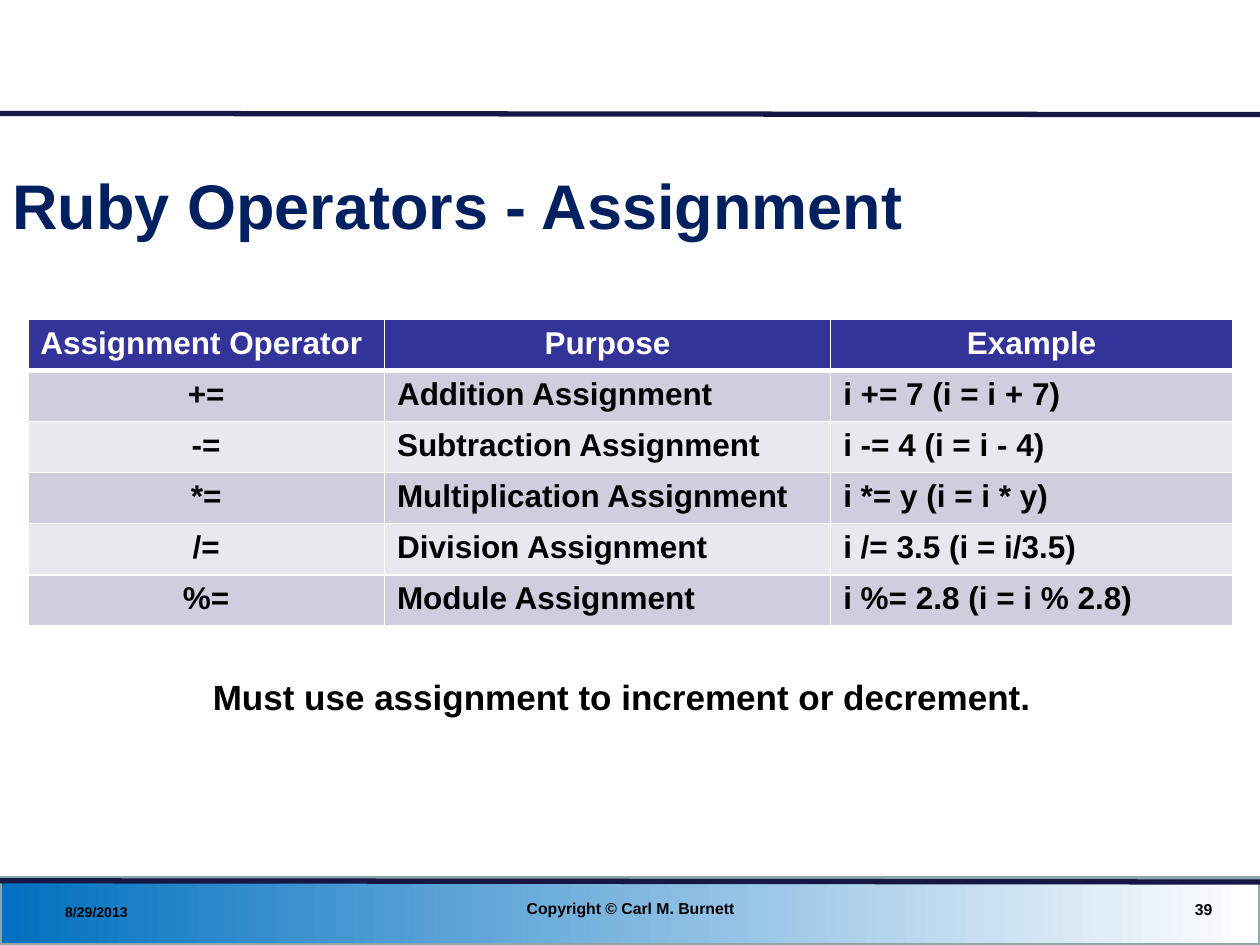
from lxml import etree
from pptx import Presentation
from pptx.dml.color import RGBColor
from pptx.enum.shapes import MSO_CONNECTOR, MSO_SHAPE
from pptx.enum.text import MSO_ANCHOR, PP_ALIGN
from pptx.oxml.ns import qn
from pptx.util import Pt

LEFT, CENTER, RIGHT = PP_ALIGN.LEFT, PP_ALIGN.CENTER, PP_ALIGN.RIGHT
TOP, MIDDLE = MSO_ANCHOR.TOP, MSO_ANCHOR.MIDDLE
FONT = "Arial"
COLORS = {
    "title": "002060", "text": "000000", "white": "FFFFFF",
    "header": "333399", "odd_row": "CECEDE", "even_row": "E8E8EF",
    "rule": "171745", "footer": "0070C0", "footer_edge": "8AA6A8",
}

WIDTH, HEIGHT = 720, 540
FOOTER_TOP = 501.84
RULES = [(503.3, 504), (64.8, 65.5)]

TEXTS = [
    ("Ruby Operators - Assignment", (0, 82.1, 689.8, 69.8), 36, "title", LEFT, MIDDLE),
    ("8/29/2013", (30.2, 511.2, 167.8, 19.4), 8, "text", LEFT, MIDDLE),
    ("39", (532.1, 509, 167.8, 20.9), 9, "text", RIGHT, MIDDLE),
    ("Copyright © Carl M. Burnett", (246.2, 508.3, 228.2, 20.9), 9, "text", CENTER, MIDDLE),
    ("Must use assignment to increment or decrement.",
     (114.5, 382.3, 491, 31.7), 20, "text", LEFT, TOP),
]

OPERATORS = [
    ("Assignment Operator", "Purpose", "Example"),
    ("+=", "Addition Assignment", "i += 7 (i = i + 7)"),
    ("-=", "Subtraction Assignment", "i -= 4 (i = i - 4)"),
    ("*=", "Multiplication Assignment", "i *= y (i = i * y)"),
    ("/=", "Division Assignment", "i /= 3.5 (i = i/3.5)"),
    ("%=", "Module Assignment", "i %= 2.8 (i = i % 2.8)"),
]
TABLE_LEFT, TABLE_TOP, ROW_HEIGHT = 15.9, 182.5, 29.2
COLUMN_WIDTHS = (203.8, 255, 229.6)


def rgb(name):
    return RGBColor.from_string(COLORS[name])


def style(paragraph, size, color, align):
    paragraph.alignment = align
    font = paragraph.font
    font.name, font.size, font.bold = FONT, Pt(size), True
    font.color.rgb = rgb(color)


def add_text(slide, text, box, size, color, align, anchor):
    frame = slide.shapes.add_textbox(*map(Pt, box)).text_frame
    frame.word_wrap = True
    frame.vertical_anchor = anchor
    frame.text = text
    style(frame.paragraphs[0], size, color, align)


def add_footer(slide):
    footer = slide.shapes.add_shape(
        MSO_SHAPE.RECTANGLE, 0, Pt(FOOTER_TOP), Pt(WIDTH), Pt(HEIGHT - FOOTER_TOP))
    footer.shadow.inherit = False
    footer.fill.gradient()
    footer.fill.gradient_angle = 0
    for stop, position, color in zip(
            footer.fill.gradient_stops, (0, 1), ("footer", "white")):
        stop.position = position
        stop.color.rgb = rgb(color)
    footer.line.color.rgb = rgb("footer_edge")
    footer.line.width = Pt(2)


def add_rule(slide, start_y, end_y):
    rule = slide.shapes.add_connector(
        MSO_CONNECTOR.STRAIGHT, 0, Pt(start_y), Pt(WIDTH), Pt(end_y))
    rule.line.color.rgb = rgb("rule")
    rule.line.width = Pt(3)
    etree.SubElement(rule._element.spPr, qn("a:effectLst"))


def add_borders(cell, widths):
    properties = cell._tc.get_or_add_tcPr()
    for side, width in widths.items():
        border = etree.SubElement(properties, qn(f"a:ln{side}"), w=str(Pt(width)))
        fill = etree.SubElement(border, qn("a:solidFill"))
        etree.SubElement(fill, qn("a:srgbClr"), val=COLORS["white"])


def add_operators(slide):
    table = slide.shapes.add_table(
        len(OPERATORS), len(COLUMN_WIDTHS), Pt(TABLE_LEFT), Pt(TABLE_TOP),
        Pt(sum(COLUMN_WIDTHS)), Pt(ROW_HEIGHT * len(OPERATORS))).table
    for column, width in zip(table.columns, COLUMN_WIDTHS):
        column.width = Pt(width)
    for r, entries in enumerate(OPERATORS):
        table.rows[r].height = Pt(ROW_HEIGHT)
        is_header = r == 0
        band = "header" if is_header else "odd_row" if r % 2 else "even_row"
        for c, entry in enumerate(entries):
            cell = table.cell(r, c)
            add_borders(cell, {"L": 1, "R": 1, "T": 3 if r == 1 else 1,
                               "B": 3 if is_header else 1})
            cell.fill.solid()
            cell.fill.fore_color.rgb = rgb(band)
            cell.text_frame.text = entry
            centered = is_header != (c == 0)
            style(cell.text_frame.paragraphs[0], 18,
                  "white" if is_header else "text", CENTER if centered else LEFT)


def main():
    deck = Presentation()
    deck.slide_width, deck.slide_height = Pt(WIDTH), Pt(HEIGHT)
    slide = deck.slides.add_slide(deck.slide_layouts[6])
    add_footer(slide)
    for start_y, end_y in RULES:
        add_rule(slide, start_y, end_y)
    add_operators(slide)
    for entry in TEXTS:
        add_text(slide, *entry)
    deck.save("out.pptx")


if __name__ == "__main__":
    main()
